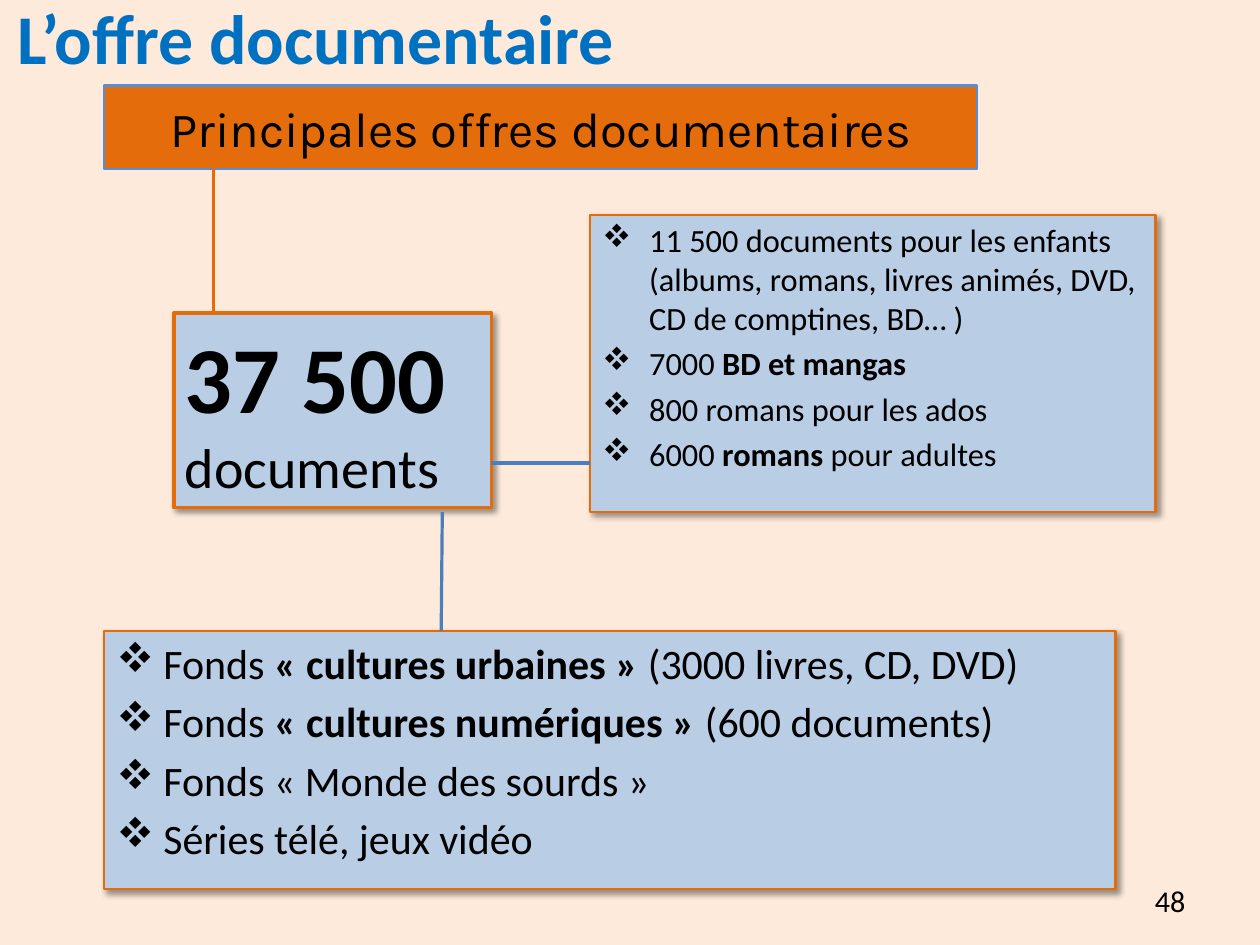
from lxml.etree import SubElement
from pptx import Presentation
from pptx.dml.color import RGBColor
from pptx.enum.shapes import MSO_CONNECTOR, MSO_SHAPE
from pptx.enum.text import MSO_ANCHOR as Anchor, PP_ALIGN as Align
from pptx.oxml.ns import qn
from pptx.util import Inches, Pt

ORANGE, BLUE, PALE_BLUE, BLACK = "E46C0A", "4B7EBC", "B9CDE5", "000000"
CM_PER_INCH = 2.54

CHILDREN_AND_NOVELS = [
    "11 500 documents pour les enfants (albums, romans, livres animés, DVD, CD de comptines, BD… )",
    "7000 *BD et mangas*",
    "800 romans pour les ados",
    "6000 *romans* pour adultes",
]
SPECIAL_COLLECTIONS = [
    "Fonds *« cultures urbaines »* (3000 livres, CD, DVD)",
    "Fonds *« cultures numériques »* (600 documents)",
    "Fonds « Monde des sourds »",
    "Séries télé, jeux vidéo",
]


def colour(value):
    """Turn a hex string into a colour."""
    return RGBColor.from_string(value)


def format_runs(paragraph, size, font="Calibri", ink=BLACK, bold=None):
    """Apply one type style to every run of a paragraph."""
    for run in paragraph.runs:
        run.font.size = Pt(size)
        run.font.name = font
        run.font.color.rgb = colour(ink)
        if bold is not None:
            run.font.bold = bold


def set_frame(frame, anchor, side=0.11, edge=0.06):
    """Set wrapping, anchor and insets of a text frame."""
    frame.word_wrap = True
    frame.vertical_anchor = anchor
    frame.margin_left = frame.margin_right = Inches(side)
    frame.margin_top = frame.margin_bottom = Inches(edge)


def add_panel(slide, box, fill, border, width, shadow=True):
    """Draw a bordered rectangle, optionally with a soft shadow."""
    panel = slide.shapes.add_shape(MSO_SHAPE.RECTANGLE, *map(Inches, box))
    panel.fill.solid()
    panel.fill.fore_color.rgb = colour(fill)
    panel.line.color.rgb = colour(border)
    panel.line.width = Pt(width)
    panel.shadow.inherit = False
    if shadow:
        effects = panel._element.spPr.find(qn("a:effectLst"))
        outer = SubElement(effects, qn("a:outerShdw"), blurRad=str(Pt(4)),
                           dist=str(Pt(3)), dir="2700000", algn="tl", rotWithShape="0")
        tint = SubElement(outer, qn("a:srgbClr"), val=BLACK)
        SubElement(tint, qn("a:alpha"), val="40000")
    return panel


def add_list(slide, box, items, size, gap, edge):
    """Draw a panel of bulleted items, with bold parts between asterisks."""
    frame = add_panel(slide, box, PALE_BLUE, ORANGE, 1.5).text_frame
    set_frame(frame, Anchor.TOP, edge=edge)
    for index, item in enumerate(items):
        entry = frame.add_paragraph() if index else frame.paragraphs[0]
        entry.alignment = Align.LEFT
        props = entry._p.get_or_add_pPr()
        props.set("marL", str(Inches(0.41)))
        props.set("indent", str(-Inches(0.41)))
        SubElement(props, qn("a:buFont"), typeface="Wingdings", charset="2")
        SubElement(props, qn("a:buChar"), char="v")
        entry.space_before = Pt(gap if index else 0)
        for part, words in enumerate(item.split("*")):
            if words:
                run = entry.add_run()
                run.text = words
                run.font.bold = part % 2 == 1
        format_runs(entry, size)


def add_banner(slide, box):
    """Draw the orange heading band."""
    frame = add_panel(slide, box, ORANGE, "558ED5", 1.5, shadow=False).text_frame
    set_frame(frame, Anchor.MIDDLE)
    frame.text = "Principales offres documentaires"
    frame.paragraphs[0].alignment = Align.CENTER
    format_runs(frame.paragraphs[0], 30.9, font="Karla")


def add_total(slide, box):
    """Draw the panel with the total number of documents."""
    frame = add_panel(slide, box, PALE_BLUE, ORANGE, 2.25).text_frame
    set_frame(frame, Anchor.TOP, 0.1, 0.05)
    frame.text = "37 500\ndocuments"
    number, unit = frame.paragraphs
    number.alignment = unit.alignment = Align.LEFT
    format_runs(number, 59.5, bold=True)
    format_runs(unit, 35.3)


def add_label(slide, box, words, size, align, side, ink=BLACK, bold=False):
    """Place a single line of text without a frame."""
    frame = slide.shapes.add_textbox(*map(Inches, box)).text_frame
    set_frame(frame, Anchor.MIDDLE, side)
    frame.text = words
    frame.paragraphs[0].alignment = align
    format_runs(frame.paragraphs[0], size, ink=ink, bold=bold)


def add_link(slide, start, end, ink):
    """Draw a straight line between two points."""
    link = slide.shapes.add_connector(MSO_CONNECTOR.STRAIGHT, *map(Inches, start + end))
    link.line.color.rgb = colour(ink)
    link.line.width = Pt(2)
    SubElement(link._element.spPr, qn("a:effectLst"))


def main():
    """Build and save the slide."""
    deck = Presentation()
    deck.slide_width = Inches(28 / CM_PER_INCH)
    deck.slide_height = Inches(21 / CM_PER_INCH)
    slide = deck.slides.add_slide(deck.slide_layouts[6])
    slide.background.fill.solid()
    slide.background.fill.fore_color.rgb = colour("FDEADA")

    add_list(slide, (5.16, 1.88, 4.95, 2.6), CHILDREN_AND_NOVELS, 20.4, 4, 0.05)
    add_label(slide, (7.9, 7.66, 2.57, 0.44), "48", 19, Align.RIGHT, 0.1)
    add_banner(slide, (0.91, 0.75, 7.64, 0.73))
    add_total(slide, (1.52, 2.74, 2.78, 1.7))
    add_list(slide, (0.91, 5.52, 8.85, 2.26), SPECIAL_COLLECTIONS, 26.4, 5, 0.06)
    add_link(slide, (1.87, 2.74), (1.87, 1.44), ORANGE)
    add_link(slide, (4.3, 4.05), (5.16, 4.05), BLUE)
    add_link(slide, (3.87, 4.48), (3.86, 5.52), BLUE)
    add_label(slide, (0.04, 0.07, 6.51, 0.5), "L’offre documentaire", 44,
              Align.LEFT, 0.11, "0070C0", True)
    deck.save("out.pptx")


if __name__ == "__main__":
    main()
